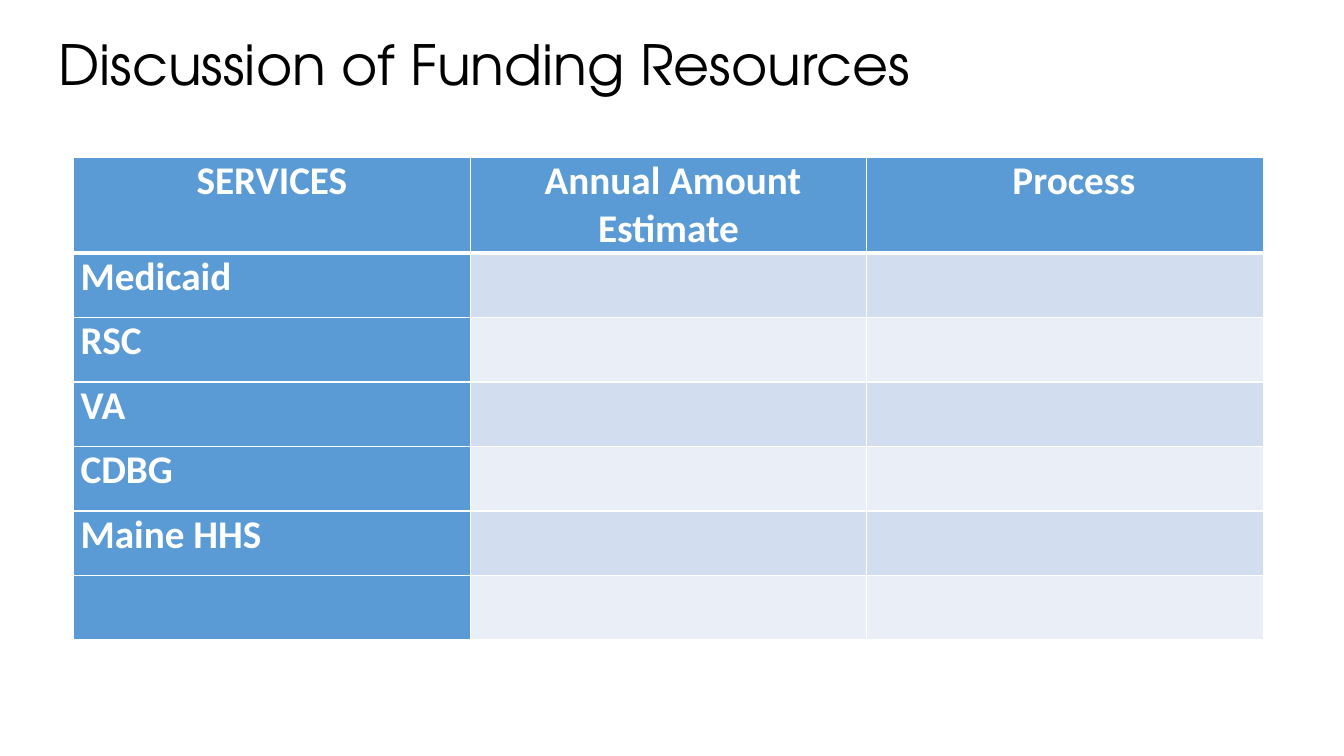
from lxml.etree import SubElement
from pptx import Presentation
from pptx.dml.color import RGBColor
from pptx.enum.text import MSO_ANCHOR as Anchor, PP_ALIGN as Align
from pptx.oxml.ns import qn
from pptx.util import Inches, Pt

WHITE, BLUE = "FFFFFF", "5B9BD5"
BANDS = ("D2DEEF", "EAEFF7")
HEADINGS = ("SERVICES", " Annual Amount Estimate", "  Process")
SERVICES = ("Medicaid", "RSC", "VA", "CDBG", "Maine HHS", "")


def color(value):
    return RGBColor.from_string(value)


class FundingSlide:
    title_font = "TeX Gyre Adventor"
    body_font = "Calibri"

    def __init__(self, deck):
        self.slide = deck.slides.add_slide(deck.slide_layouts[5])

    def style(self, paragraph, font, size, ink, bold=False):
        for run in paragraph.runs:
            run.font.name = font
            run.font.size = Pt(size)
            run.font.bold = bold
            run.font.color.rgb = color(ink)

    def title(self, text, left, top, width, height):
        heading = self.slide.shapes.title
        heading.left, heading.top = Inches(left), Inches(top)
        heading.width, heading.height = Inches(width), Inches(height)
        frame = heading.text_frame
        frame.text = text
        frame.word_wrap = True
        frame.vertical_anchor = Anchor.MIDDLE
        paragraph = frame.paragraphs[0]
        paragraph.alignment = Align.LEFT
        paragraph.line_spacing = 0.9
        self.style(paragraph, self.title_font, 39.6, "000000")

    def borders(self, cell, top, bottom):
        properties = cell._tc.get_or_add_tcPr()
        widths = {"lnL": 1, "lnR": 1, "lnT": top, "lnB": bottom}
        for position, (side, width) in enumerate(widths.items()):
            line = SubElement(properties, qn(f"a:{side}"), w=str(Pt(width)))
            solid = SubElement(line, qn("a:solidFill"))
            SubElement(solid, qn("a:srgbClr"), val=WHITE)
            properties.insert(position, line)

    def cell(self, cell, text, fill, align):
        cell.margin_left = cell.margin_right = Inches(0.07)
        cell.margin_top = cell.margin_bottom = 0
        cell.fill.solid()
        cell.fill.fore_color.rgb = color(fill)
        cell.text_frame.text = text
        paragraph = cell.text_frame.paragraphs[0]
        paragraph.alignment = align
        self.style(paragraph, self.body_font, 28, WHITE, bold=True)

    def table(self, headings, services, left, top, width, header_height, row_height):
        height = header_height + row_height * len(services)
        funding = self.slide.shapes.add_table(
            len(services) + 1, len(headings),
            Inches(left), Inches(top), Inches(width), Inches(height)).table
        for column in funding.columns:
            column.width = Inches(width / len(headings))
        contents = [headings] + [(name, "", "") for name in services]
        for r, texts in enumerate(contents):
            funding.rows[r].height = Inches(row_height if r else header_height)
            for c, text in enumerate(texts):
                fill = BANDS[(r - 1) % 2] if r and c else BLUE
                cell = funding.cell(r, c)
                self.cell(cell, text, fill, Align.LEFT if r else Align.CENTER)
                self.borders(cell, 3 if r == 1 else 1, 3 if r == 0 else 1)


def main():
    deck = Presentation()
    deck.slide_width, deck.slide_height = Inches(13.33), Inches(7.5)
    page = FundingSlide(deck)
    page.title("Discussion of Funding Resources", 0.48, 0.43, 11.5, 0.49)
    page.table(HEADINGS, SERVICES, 0.73, 1.56, 11.8, 0.95, 0.64)
    deck.save("out.pptx")


if __name__ == "__main__":
    main()
